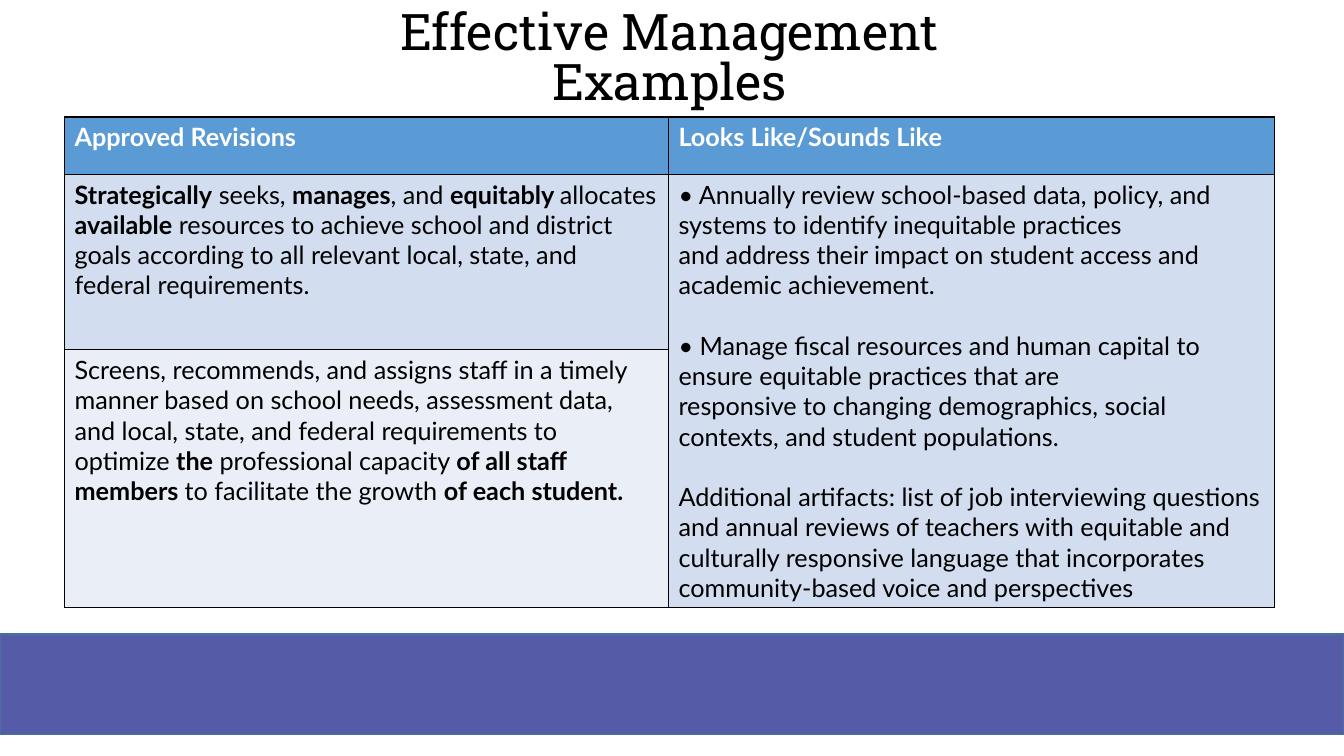
from lxml.etree import SubElement
from pptx import Presentation
from pptx.dml.color import RGBColor
from pptx.enum.shapes import MSO_SHAPE
from pptx.enum.text import MSO_ANCHOR, PP_ALIGN
from pptx.oxml.ns import qn
from pptx.util import Inches, Pt

COLORS = {
    "black": "000000", "white": "FFFFFF", "band": "565BA7", "band_line": "43739E",
    "header": "5B9BD5", "row_dark": "D2DEEF", "row_light": "EAEFF7",
}
TITLE = {"name": "Roboto Slab", "size": Pt(36)}
BODY = {"name": "Lato", "size": Pt(18)}
SECTION_GAP = Pt(21.6)

# A paragraph is a list of (text, bold) runs.
RESOURCES = [[
    ("Strategically", True), (" seeks, ", False), ("manages", True), (", and ", False),
    ("equitably ", True), ("allocates ", False), ("available", True),
    (" resources to achieve school and district goals according to all relevant "
     "local, state, and federal requirements.", False),
]]
STAFFING = [[
    ("Screens, recommends, and assigns staff in a timely manner based on school needs, "
     "assessment data, and local, state, and federal requirements to optimize ", False),
    ("the", True), (" professional capacity ", False), ("of all staff members ", True),
    ("to facilitate the growth ", False), ("of each student.", True),
]]
# Each section is set apart from the one before it.
EXAMPLE_SECTIONS = [
    ["• Annually review school-based data, policy, and systems to identify inequitable practices",
     "and address their impact on student access and academic achievement."],
    ["• Manage fiscal resources and human capital to ensure equitable practices that are",
     "responsive to changing demographics, social contexts, and student populations."],
    ["Additional artifacts: list of job interviewing questions and annual reviews of teachers "
     "with equitable and culturally responsive language that incorporates community-based "
     "voice and perspectives"],
]


def rgb(color):
    return RGBColor.from_string(COLORS[color])


class SlideBuilder:
    def __init__(self, slide):
        self.slide = slide

    def add_runs(self, paragraph, runs, style, color):
        for text, bold in runs:
            run = paragraph.add_run()
            run.text = text
            for name, value in {**style, "bold": bold}.items():
                setattr(run.font, name, value)
            run.font.color.rgb = rgb(color)

    def band(self, left, top, width, height):
        shape = self.slide.shapes.add_shape(
            MSO_SHAPE.RECTANGLE, *map(Inches, (left, top, width, height)))
        shape.shadow.inherit = False
        shape.fill.solid()
        shape.fill.fore_color.rgb = rgb("band")
        shape.line.color.rgb = rgb("band_line")
        shape.line.width = Pt(1)

    def title(self, lines, left, top, width, height):
        frame = self.slide.shapes.add_textbox(
            *map(Inches, (left, top, width, height))).text_frame
        frame.word_wrap = True
        frame.vertical_anchor = MSO_ANCHOR.MIDDLE
        paragraph = frame.paragraphs[0]
        paragraph.alignment = PP_ALIGN.CENTER
        paragraph.line_spacing = 0.83
        for index, line in enumerate(lines):
            if index:
                paragraph.add_line_break()
            self.add_runs(paragraph, [(line, False)], TITLE, "black")

    def table(self, left, top, columns, rows):
        table = self.slide.shapes.add_table(
            len(rows), len(columns), Inches(left), Inches(top),
            Inches(sum(columns)), Inches(sum(rows))).table
        for column, width in zip(table.columns, columns):
            column.width = Inches(width)
        for row, height in zip(table.rows, rows):
            row.height = Inches(height)
        for cell in table.iter_cells():
            self.borders(cell)
        return table

    def borders(self, cell):
        properties = cell._tc.get_or_add_tcPr()
        for side in ("lnL", "lnR", "lnT", "lnB"):
            line = SubElement(properties, qn(f"a:{side}"), w=str(Pt(1)))
            fill = SubElement(line, qn("a:solidFill"))
            SubElement(fill, qn("a:srgbClr"), val=COLORS["black"])

    def cell(self, cell, paragraphs, fill, color="black"):
        cell.fill.solid()
        cell.fill.fore_color.rgb = rgb(fill)
        frame = cell.text_frame
        for index, runs in enumerate(paragraphs):
            paragraph = frame.add_paragraph() if index else frame.paragraphs[0]
            self.add_runs(paragraph, runs, BODY, color)
        return frame


def main():
    presentation = Presentation()
    presentation.slide_width = Inches(13.33)
    presentation.slide_height = Inches(7.5)
    builder = SlideBuilder(presentation.slides.add_slide(presentation.slide_layouts[6]))

    builder.band(0, 6.29, 13.33, 1)
    builder.title(["Effective Management", "Examples"], 0.64, 0, 12, 1.2)

    table = builder.table(0.64, 1.16, [5.99, 6.01], [0.57, 1.74, 2.56])
    for column, heading in enumerate(["Approved Revisions", "Looks Like/Sounds Like"]):
        builder.cell(table.cell(0, column), [[(heading, True)]], "header", "white")
    builder.cell(table.cell(1, 0), RESOURCES, "row_dark")
    builder.cell(table.cell(2, 0), STAFFING, "row_light")

    table.cell(1, 1).merge(table.cell(2, 1))
    examples = [[(line, False)] for section in EXAMPLE_SECTIONS for line in section]
    frame = builder.cell(table.cell(1, 1), examples, "row_dark")
    start = 0
    for section in EXAMPLE_SECTIONS[:-1]:
        start += len(section)
        frame.paragraphs[start].space_before = SECTION_GAP

    presentation.save("out.pptx")


if __name__ == "__main__":
    main()
